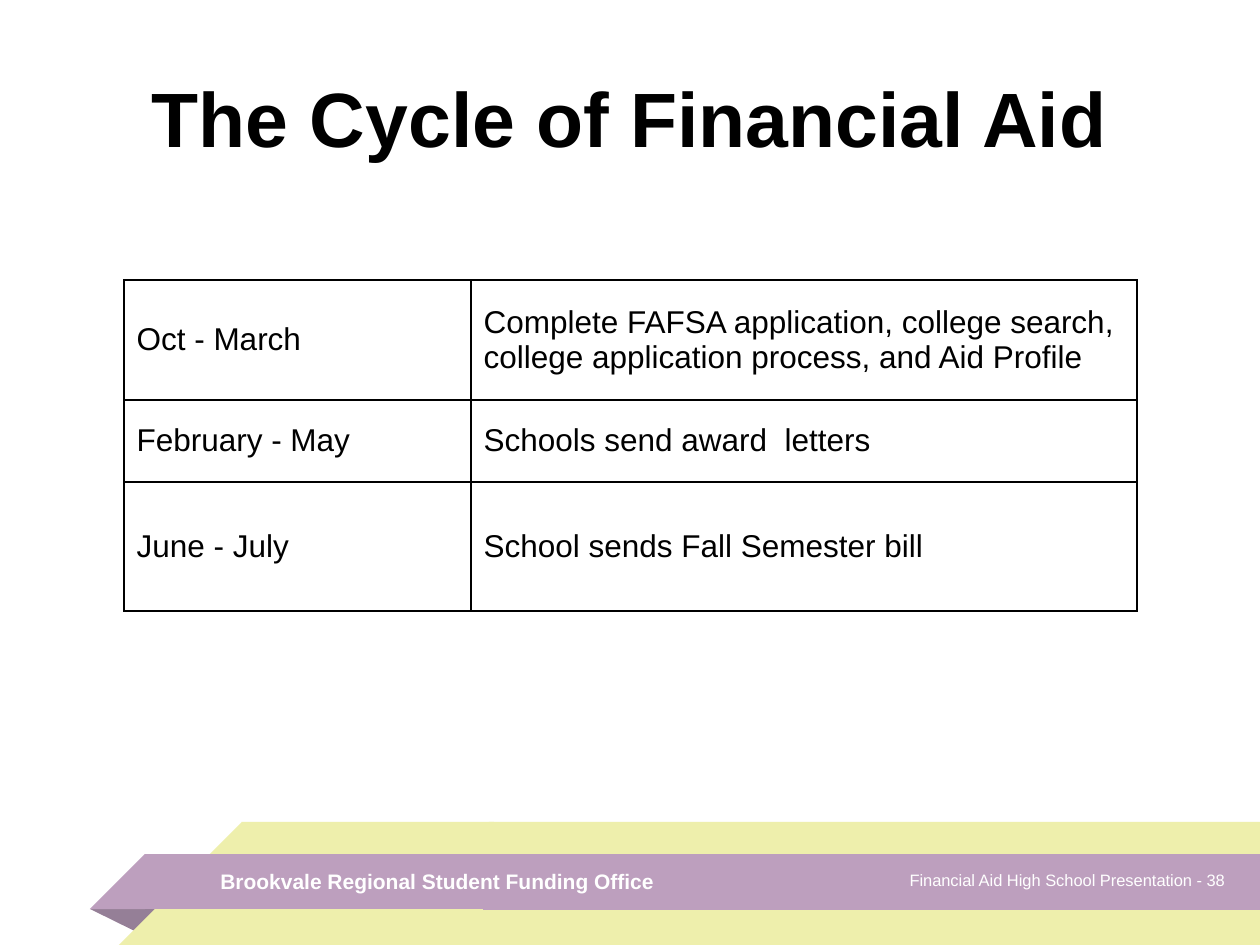
from typing import NamedTuple

from lxml import etree
from pptx import Presentation
from pptx import util as u
from pptx.dml.color import RGBColor
from pptx.enum import shapes, text
from pptx.oxml import ns

SCALE = 914400 / 126  # EMU in one px
FONT = "Arial"
BLACK = RGBColor(0x00, 0x00, 0x00)
WHITE = RGBColor(0xFF, 0xFF, 0xFF)
LEMON = RGBColor(0xEE, 0xEF, 0xAC)
LILAC = RGBColor(0xBD, 0x9F, 0xBE)
PLUM = RGBColor(0x95, 0x7F, 0x97)

RECT = shapes.MSO_SHAPE.RECTANGLE
CORNER = shapes.MSO_SHAPE.RIGHT_TRIANGLE
FOLD = shapes.MSO_SHAPE.ISOSCELES_TRIANGLE
LEFT, MID, RIGHT = (text.PP_ALIGN.LEFT, text.PP_ALIGN.CENTER,
                    text.PP_ALIGN.RIGHT)


class Box(NamedTuple):
    x: int
    y: int
    w: int
    h: int


class Band(NamedTuple):
    kind: shapes.MSO_SHAPE
    box: Box
    fill: RGBColor
    flip: bool = False
    turn: int = 0
    peak: float | None = None


class Label(NamedTuple):
    words: str
    box: Box
    size: float
    bold: bool
    align: text.PP_ALIGN


class Row(NamedTuple):
    height: int
    cells: tuple[str, str]


BANDS = [
    Band(RECT, Box(489, 822, 771, 123), LEMON),
    Band(FOLD, Box(90, 909, 72, 24), PLUM, turn=180, peak=0.324),
    Band(RECT, Box(242, 822, 252, 123), LEMON),
    Band(CORNER, Box(119, 822, 123, 123), LEMON, flip=True),
    Band(RECT, Box(145, 854, 349, 55), LILAC),
    Band(CORNER, Box(90, 854, 55, 55), LILAC, flip=True),
    Band(RECT, Box(483, 854, 777, 56), LILAC),
]
LABELS = [
    Label("Brookvale Regional Student Funding Office",
          Box(208, 856, 544, 50), 12, True, LEFT),
    Label("Financial Aid High School Presentation - 38",
          Box(859, 855, 378, 50), 9.4, False, RIGHT),
]
COLS = (347, 666)
ROWS = [
    Row(120, ("Oct - March",
              "Complete FAFSA application, college search, "
              "college application process, and Aid Profile")),
    Row(82, ("February - May", "Schools send award  letters")),
    Row(129, ("June - July", "School sends Fall Semester bill")),
]


def px(n: int) -> u.Emu:
    return u.Emu(round(n * SCALE))


def place(box: Box) -> list[u.Emu]:
    return [px(n) for n in box]


def write(frame, words: str, size: float, color: RGBColor,
          bold: bool = False, align: text.PP_ALIGN = LEFT) -> None:
    para = frame.paragraphs[0]
    para.alignment = align
    run = para.add_run()
    run.text = words
    font = run.font
    font.name, font.size, font.bold = FONT, u.Pt(size), bold
    font.color.rgb = color


def draw_band(slide, band: Band) -> None:
    shape = slide.shapes.add_shape(band.kind, *place(band.box))
    shape.shadow.inherit = False
    shape.fill.solid()
    shape.fill.fore_color.rgb = band.fill
    shape.line.fill.background()
    shape.rotation = band.turn
    if band.flip:
        shape.element.spPr.find(ns.qn("a:xfrm")).set("flipH", "1")
    if band.peak is not None:
        shape.adjustments[0] = band.peak


def draw_label(slide, label: Label) -> None:
    frame = slide.shapes.add_textbox(*place(label.box)).text_frame
    frame.word_wrap = True
    frame.vertical_anchor = text.MSO_ANCHOR.MIDDLE
    write(frame, label.words, label.size, WHITE, label.bold, label.align)


def draw_title(slide, words: str) -> None:
    title = slide.shapes.title
    title.left, title.top, title.width, title.height = place(
        Box(63, 38, 1134, 157))
    title.text_frame.vertical_anchor = text.MSO_ANCHOR.MIDDLE
    write(title.text_frame, words, 44, BLACK, True, MID)


def edge(cell) -> None:
    """Give the cell a thin black border on all four sides."""
    props = cell._tc.get_or_add_tcPr()
    for spot, side in enumerate(("lnL", "lnR", "lnT", "lnB")):
        line = etree.Element(ns.qn(f"a:{side}"), w=str(u.Pt(1)))
        fill = etree.SubElement(line, ns.qn("a:solidFill"))
        etree.SubElement(fill, ns.qn("a:srgbClr"), val=str(BLACK))
        props.insert(spot, line)


def draw_table(slide) -> None:
    box = Box(124, 280, sum(COLS), sum(row.height for row in ROWS))
    table = slide.shapes.add_table(len(ROWS), len(COLS), *place(box)).table
    table.first_row = table.horz_banding = False
    for col, width in zip(table.columns, COLS):
        col.width = px(width)
    for line, row in zip(table.rows, ROWS):
        line.height = px(row.height)
        for cell, words in zip(line.cells, row.cells):
            cell.fill.solid()
            cell.fill.fore_color.rgb = WHITE
            cell.vertical_anchor = text.MSO_ANCHOR.MIDDLE
            edge(cell)
            write(cell.text_frame, words, 18, BLACK)


def main() -> None:
    deck = Presentation()
    deck.slide_width, deck.slide_height = px(1260), px(945)
    slide = deck.slides.add_slide(deck.slide_layouts[5])
    for band in BANDS:
        draw_band(slide, band)
    draw_title(slide, "The Cycle of Financial Aid")
    draw_table(slide)
    for label in LABELS:
        draw_label(slide, label)
    deck.save("out.pptx")


if __name__ == "__main__":
    main()
